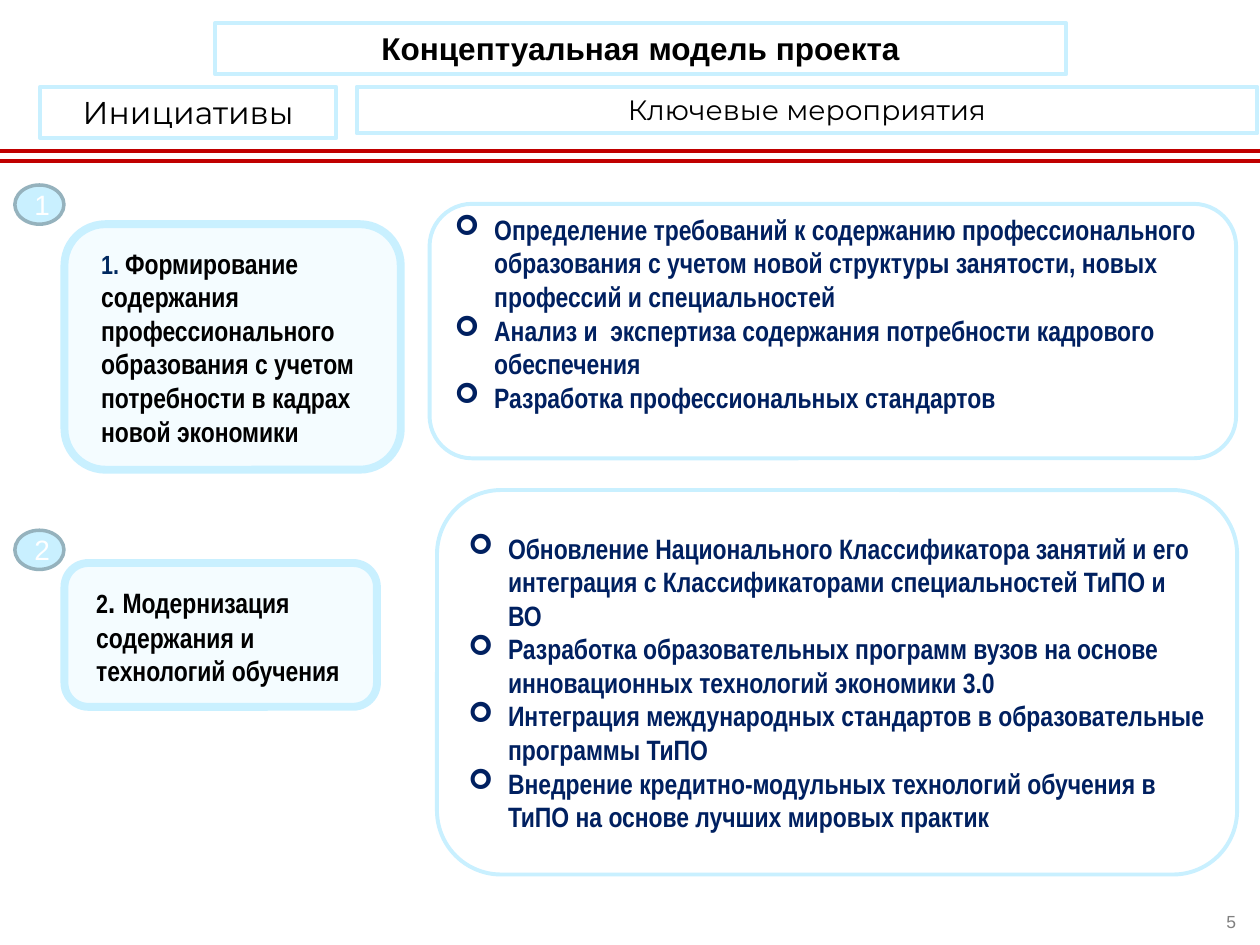
"""Build the slide with the conceptual model of the project."""
import lxml.etree
import pptx
import pptx.dml.color
import pptx.enum.shapes
import pptx.enum.text
import pptx.oxml.ns
import pptx.util

Cm = pptx.util.Cm
Pt = pptx.util.Pt
SHAPE = pptx.enum.shapes.MSO_SHAPE
ALIGN = pptx.enum.text.PP_ALIGN
ANCHOR = pptx.enum.text.MSO_ANCHOR
SKY, PALE, NAVY, RED = "C9F0FF", "F4FCFF", "002060", "C00000"
BLACK, WHITE, GREY = "000000", "FFFFFF", "808080"


def colour(value):
    return pptx.dml.color.RGBColor.from_string(value)


def add_xml(parent, tag, **attributes):
    return lxml.etree.SubElement(parent, pptx.oxml.ns.qn(tag), attributes)


class SlideBuilder:
    """Hold the shared style and the current slide."""

    narrow = "Arial Narrow"
    border = 2.25

    def __init__(self, page):
        self.page = page

    def paint(self, box, fill, line=SKY, width=border):
        if fill:
            box.fill.solid()
            box.fill.fore_color.rgb = colour(fill)
        else:
            box.fill.background()
        box.line.color.rgb = colour(line)
        box.line.width = Pt(width)

    def place(self, box, left, top, width, height):
        box.left, box.top = Cm(left), Cm(top)
        box.width, box.height = Cm(width), Cm(height)

    def frame(self, box, anchor):
        frame = box.text_frame
        frame.word_wrap = True
        frame.auto_size = pptx.enum.text.MSO_AUTO_SIZE.NONE
        frame.vertical_anchor = anchor
        return frame

    def style(self, para, font, size, text_colour, bold=False, align=ALIGN.LEFT):
        para.alignment = align
        para.font.name = font
        para.font.size = Pt(size)
        para.font.bold = bold
        para.font.color.rgb = colour(text_colour)

    def shape(self, kind, area, fill, **outline):
        box = self.page.shapes.add_shape(kind, *map(Cm, area))
        box.shadow.inherit = False
        self.paint(box, fill, **outline)
        return box

    def title(self, text, area):
        box = self.page.shapes.title
        self.place(box, *area)
        self.paint(box, None)
        para = self.frame(box, ANCHOR.TOP).paragraphs[0]
        para.text = text
        self.style(para, "Arial", 18, BLACK, True, ALIGN.CENTER)

    def heading(self, text, area, size):
        box = self.shape(SHAPE.RECTANGLE, area, WHITE)
        para = self.frame(box, ANCHOR.TOP).paragraphs[0]
        para.text = text
        self.style(para, "Montserrat", size, BLACK, align=ALIGN.CENTER)

    def rule(self, top):
        line = self.page.shapes.add_connector(
            pptx.enum.shapes.MSO_CONNECTOR.STRAIGHT, Cm(0), Cm(top), Cm(25.4), Cm(top))
        line.line.color.rgb = colour(RED)
        line.line.width = Pt(self.border)
        add_xml(line._element.spPr, "a:effectLst")

    def badge(self, text, top):
        box = self.shape(SHAPE.OVAL, (0.3, top, 0.99, 0.79), SKY, line="95B2BD", width=2)
        para = self.frame(box, ANCHOR.MIDDLE).paragraphs[0]
        para.text = text
        self.style(para, "Arial", 16, WHITE, align=ALIGN.CENTER)

    def initiative(self, spans, area, numbered=False):
        box = self.shape(SHAPE.ROUNDED_RECTANGLE, area, PALE, width=4.5)
        para = self.frame(box, ANCHOR.MIDDLE).paragraphs[0]
        properties = para._p.get_or_add_pPr()
        properties.set("marL", str(Cm(0.25)))
        properties.set("indent", "0")
        if numbered:
            add_xml(add_xml(properties, "a:buClr"), "a:srgbClr", val="002960")
            add_xml(properties, "a:buFont", typeface=self.narrow)
            add_xml(properties, "a:buAutoNum", type="arabicPeriod")
        para.space_before, para.space_after = Pt(3), Pt(6)
        self.style(para, self.narrow, 16, BLACK, True)
        for text, size in spans:
            span = para.add_run()
            span.text = text
            span.font.size = Pt(size)

    def activities(self, index, items, area, bottom=0.13):
        box = self.page.placeholders[index]
        self.place(box, *area)
        geometry = add_xml(box._element.spPr, "a:prstGeom", prst="roundRect")
        add_xml(geometry, "a:avLst")
        self.paint(box, WHITE)
        frame = self.frame(box, ANCHOR.MIDDLE)
        frame.margin_bottom = Cm(bottom)
        frame.text = "\n".join(items)
        for para in frame.paragraphs:
            properties = para._p.get_or_add_pPr()
            properties.set("marL", str(Cm(0.8)))
            properties.set("indent", str(-Cm(0.8)))
            add_xml(properties, "a:buFont", typeface="Wingdings")
            add_xml(properties, "a:buChar", char="➢")
            para.space_before = Pt(0)
            self.style(para, self.narrow, 16, NAVY, True)

    def page_number(self, text):
        box = self.page.shapes.add_textbox(*map(Cm, (24.46, 18.36, 0.46, 0.43)))
        frame = self.frame(box, ANCHOR.MIDDLE)
        frame.margin_left = frame.margin_right = frame.margin_top = frame.margin_bottom = 0
        frame.paragraphs[0].text = text
        self.style(frame.paragraphs[0], "Arial", 10, GREY, align=ALIGN.RIGHT)


def main():
    deck = pptx.Presentation()
    deck.slide_width, deck.slide_height = Cm(25.4), Cm(19.05)
    builder = SlideBuilder(deck.slides.add_slide(deck.slide_layouts.get_by_name("Two Content")))

    builder.title("Концептуальная модель проекта", (4.34, 0.46, 17.15, 1.04))
    builder.heading("Инициативы", (0.81, 1.75, 5.97, 1.04), 18)
    builder.heading("Ключевые мероприятия", (7.19, 1.75, 18.16, 0.94), 16)
    for top in (3.05, 3.25):
        builder.rule(top)

    builder.initiative(
        [(" ", 15),
         ("Формирование содержания профессионального образования с учетом "
          "потребности в кадрах новой экономики", 16)],
        (1.3, 4.52, 6.78, 4.95), numbered=True)
    builder.initiative(
        [("2", 15), (". ", 18), ("Модернизация содержания и  технологий обучения", 16)],
        (1.3, 11.35, 6.3, 2.9))
    builder.activities(1, [
        "Определение требований к содержанию профессионального образования "
        "с учетом новой структуры занятости, новых профессий и специальностей",
        "Анализ и  экспертиза содержания потребности кадрового обеспечения",
        "Разработка профессиональных стандартов",
    ], (8.66, 4.11, 16.26, 5.13), bottom=0.85)
    builder.activities(2, [
        "Обновление Национального Классификатора занятий и его интеграция "
        "с Классификаторами специальностей ТиПО и ВО",
        "Разработка образовательных программ вузов на основе инновационных "
        "технологий экономики 3.0",
        "Интеграция международных стандартов в образовательные программы ТиПО",
        "Внедрение кредитно-модульных технологий обучения в ТиПО на основе "
        "лучших мировых практик",
    ], (8.81, 9.88, 16.13, 7.75))
    for text, top in (("1", 3.73), ("2", 10.69)):
        builder.badge(text, top)
    builder.page_number("5")
    deck.save("out.pptx")


if __name__ == "__main__":
    main()
